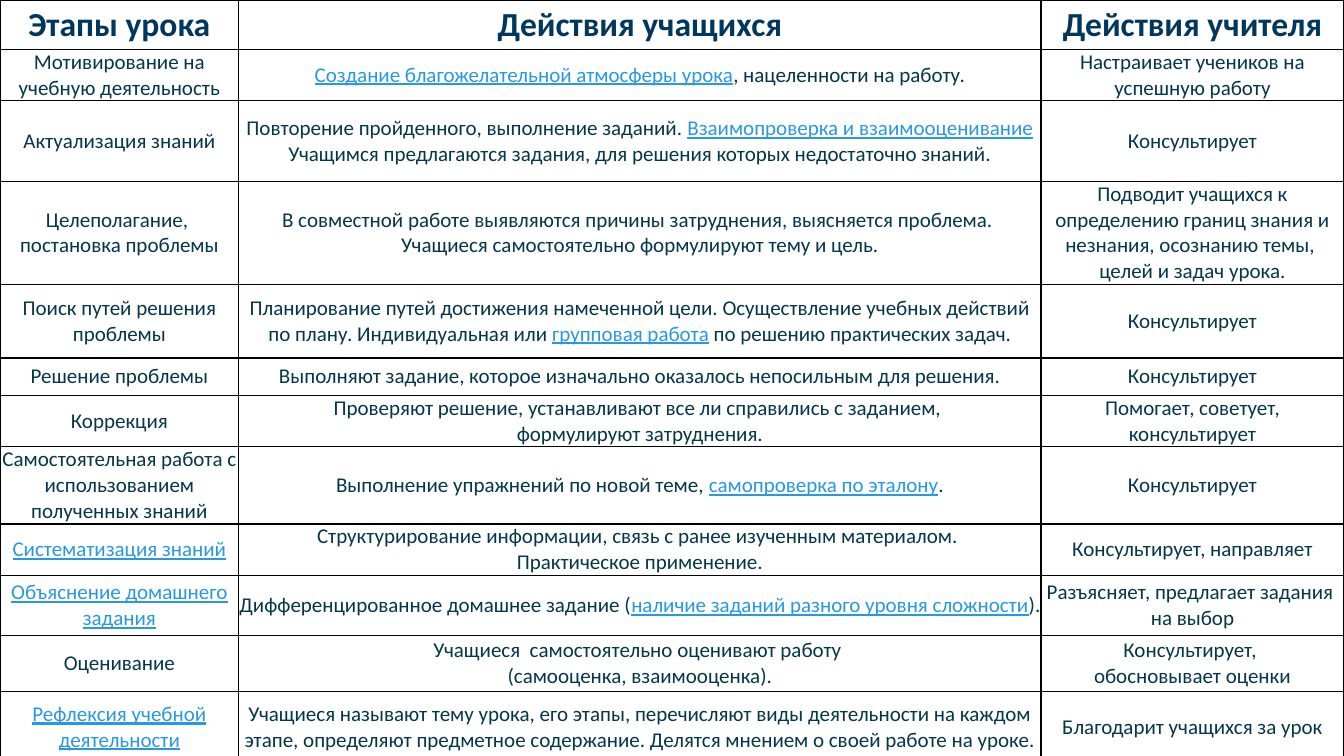
from dataclasses import dataclass

from lxml import etree
from pptx import Presentation
from pptx import util as u
from pptx.dml import color
from pptx.enum import text
from pptx.oxml import ns

COLORS = {"header": "003760", "body": "04374A", "link": "2998E3", "border": "000000"}
FONT = "Calibri"
COLUMN_WIDTHS = (170.6, 573, 216.4)
CONSULTS = "Консультирует"


@dataclass(frozen=True)
class Entry:
    text: str
    linked: str = ""


@dataclass(frozen=True)
class Stage:
    height: float
    name: Entry
    students: Entry
    teacher: Entry


def fully_linked(phrase: str) -> Entry:
    return Entry(phrase, phrase)


HEADER = Stage(35.3, Entry("Этапы урока"), Entry("Действия учащихся"), Entry("Действия учителя"))
STAGES = [
    Stage(
        33.8,
        Entry("Мотивирование на учебную деятельность"),
        Entry(
            "Создание благожелательной атмосферы урока, нацеленности на работу.",
            "Создание благожелательной атмосферы урока",
        ),
        Entry("Настраивает учеников на успешную работу"),
    ),
    Stage(
        57.6,
        Entry("Актуализация знаний"),
        Entry(
            "Повторение пройденного, выполнение заданий. Взаимопроверка и взаимооценивание\n"
            "Учащимся предлагаются задания, для решения которых недостаточно знаний.",
            "Взаимопроверка и взаимооценивание",
        ),
        Entry(CONSULTS),
    ),
    Stage(
        68.4,
        Entry("Целеполагание, \nпостановка проблемы"),
        Entry(
            "В совместной работе выявляются причины затруднения, выясняется проблема. \n"
            "Учащиеся самостоятельно формулируют тему и цель."
        ),
        Entry(
            "Подводит учащихся к определению границ знания и незнания, осознанию темы, \n"
            "целей и задач урока."
        ),
    ),
    Stage(
        52.6,
        Entry("Поиск путей решения проблемы"),
        Entry(
            "Планирование путей достижения намеченной цели. Осуществление учебных действий "
            "по плану. Индивидуальная или групповая работа по решению практических задач.",
            "групповая работа",
        ),
        Entry(CONSULTS),
    ),
    Stage(
        26.6,
        Entry("Решение проблемы"),
        Entry("Выполняют задание, которое изначально оказалось непосильным для решения."),
        Entry(CONSULTS),
    ),
    Stage(
        33.8,
        Entry("Коррекция"),
        Entry(
            "Проверяют решение, устанавливают все ли справились с заданием, \n"
            "формулируют затруднения."
        ),
        Entry("Помогает, советует, консультирует"),
    ),
    Stage(
        51.1,
        Entry("Самостоятельная работа с использованием полученных знаний"),
        Entry(
            "Выполнение упражнений по новой теме, самопроверка по эталону.",
            "самопроверка по эталону",
        ),
        Entry(CONSULTS),
    ),
    Stage(
        33.8,
        fully_linked("Систематизация знаний"),
        Entry(
            "Структурирование информации, связь с ранее изученным материалом. \n"
            "Практическое применение."
        ),
        Entry("Консультирует, направляет"),
    ),
    Stage(
        43.2,
        fully_linked("Объяснение домашнего задания"),
        Entry(
            "Дифференцированное домашнее задание (наличие заданий разного уровня сложности).",
            "наличие заданий разного уровня сложности",
        ),
        Entry("Разъясняет, предлагает задания \nна выбор"),
    ),
    Stage(
        39.6,
        Entry("Оценивание"),
        Entry("Учащиеся  самостоятельно оценивают работу \n(самооценка, взаимооценка)."),
        Entry("Консультирует, \nобосновывает оценки"),
    ),
    Stage(
        51.1,
        fully_linked("Рефлексия учебной деятельности"),
        Entry(
            "Учащиеся называют тему урока, его этапы, перечисляют виды деятельности на каждом "
            "этапе, определяют предметное содержание. Делятся мнением о своей работе на уроке."
        ),
        Entry("Благодарит учащихся за урок"),
    ),
]


def draw_borders(cell) -> None:
    properties = cell._tc.get_or_add_tcPr()
    for side in ("a:lnL", "a:lnR", "a:lnT", "a:lnB"):
        line = etree.SubElement(properties, ns.qn(side), w=str(u.Pt(1)))
        fill = etree.SubElement(line, ns.qn("a:solidFill"))
        etree.SubElement(fill, ns.qn("a:srgbClr"), val=COLORS["border"])


def split_linked(line: str, linked: str) -> list[str]:
    if linked and linked in line:
        return [part for part in line.partition(linked) if part]
    return [line]


def fill_cell(cell, entry: Entry, is_header: bool) -> None:
    draw_borders(cell)
    cell.fill.background()
    cell.vertical_anchor = text.MSO_ANCHOR.MIDDLE
    cell.margin_left = cell.margin_right = cell.margin_top = cell.margin_bottom = u.Pt(0)
    cell.text_frame.text = entry.text
    for paragraph in cell.text_frame.paragraphs:
        paragraph.alignment = text.PP_ALIGN.CENTER
        first, *others = split_linked(paragraph.text, entry.linked)
        paragraph.text = first
        for part in others:
            paragraph.add_run().text = part
        for run in paragraph.runs:
            is_linked = run.text == entry.linked
            role = "header" if is_header else "link" if is_linked else "body"
            run.font.name = FONT
            run.font.size = u.Pt(24 if is_header else 15)
            run.font.bold = is_header
            run.font.underline = is_linked
            run.font.color.rgb = color.RGBColor.from_string(COLORS[role])


def draw_table(slide, stages: list[Stage]) -> None:
    height = sum(stage.height for stage in stages)
    frame = slide.shapes.add_table(
        len(stages), len(COLUMN_WIDTHS), u.Pt(0), u.Pt(0), u.Pt(sum(COLUMN_WIDTHS)), u.Pt(height)
    )
    table = frame.table
    table.horz_banding = False
    table.first_row = False
    for column, width in zip(table.columns, COLUMN_WIDTHS):
        column.width = u.Pt(width)
    for row, stage in zip(table.rows, stages):
        row.height = u.Pt(stage.height)
        for cell, entry in zip(row.cells, (stage.name, stage.students, stage.teacher)):
            fill_cell(cell, entry, stage is HEADER)


def main() -> None:
    presentation = Presentation()
    presentation.slide_width = u.Pt(960)
    presentation.slide_height = u.Pt(540)
    slide = presentation.slides.add_slide(presentation.slide_layouts[6])
    draw_table(slide, [HEADER, *STAGES])
    presentation.save("out.pptx")


if __name__ == "__main__":
    main()
